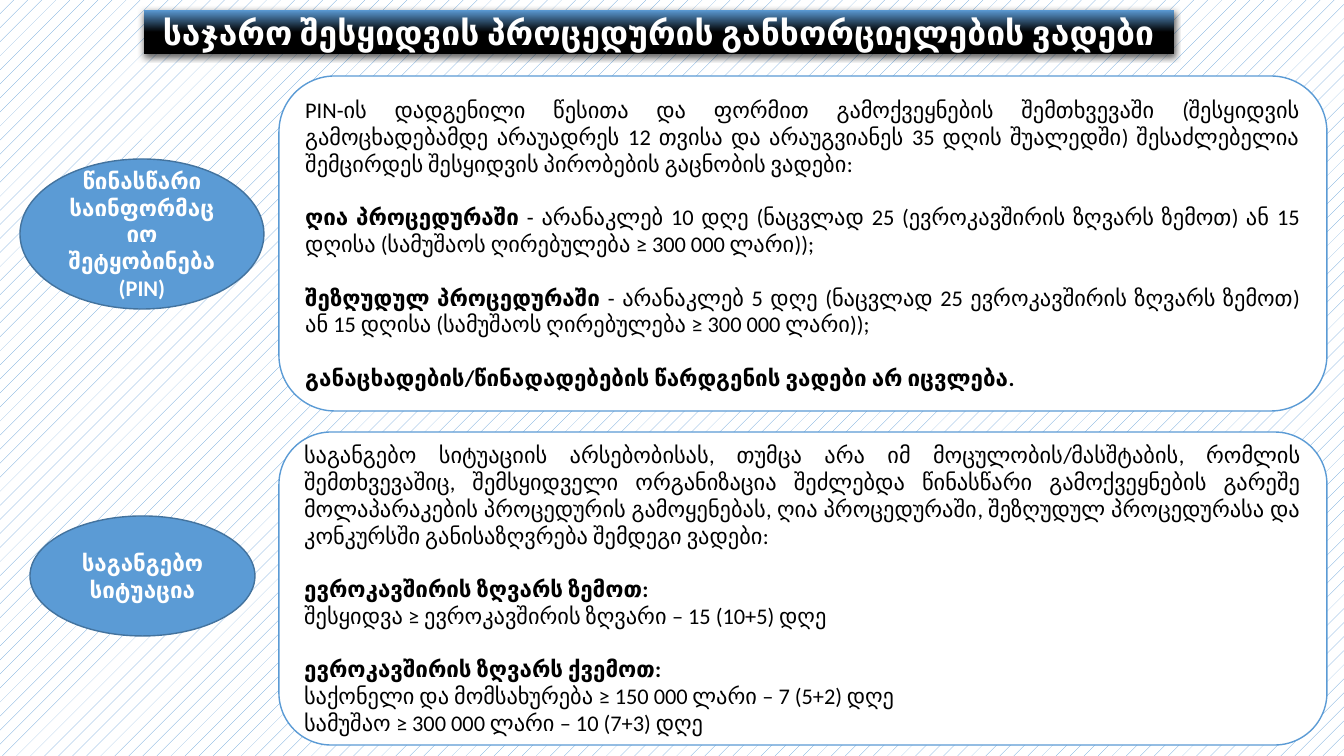
from lxml.etree import SubElement
from pptx import Presentation
from pptx.dml.color import RGBColor
from pptx.enum.dml import MSO_PATTERN_TYPE
from pptx.enum.shapes import MSO_SHAPE
from pptx.enum.text import MSO_ANCHOR, MSO_AUTO_SIZE, PP_ALIGN
from pptx.oxml import parse_xml
from pptx.oxml.ns import nsdecls, qn
from pptx.util import Emu, Pt

BLUE = RGBColor(0x5B, 0x9B, 0xD5)
DARK_BLUE = RGBColor(0x43, 0x73, 0x9E)
BLACK = RGBColor(0, 0, 0)
WHITE = RGBColor(255, 255, 255)

EMU_PER_PX = 914400 / 100.8
SLIDE_SIZE = (1344, 756)
PANEL_LEFT, PANEL_WIDTH = 279, 1048
TITLE_ONLY = 5

TITLE = "საჯარო შესყიდვის პროცედურის განხორციელების ვადები"

NOTICE_TERMS = [
    [("PIN-ის დადგენილი წესითა და ფორმით გამოქვეყნების შემთხვევაში (შესყიდვის გამოცხადებამდე არაუადრეს 12 თვისა და არაუგვიანეს 35 დღის შუალედში) შესაძლებელია შემცირდეს შესყიდვის პირობების გაცნობის ვადები:", False)],
    [("ღია პროცედურაში ", True),
     ("- არანაკლებ 10 დღე (ნაცვლად 25 (ევროკავშირის ზღვარს ზემოთ) ან 15 დღისა (სამუშაოს ღირებულება ≥ 300 000 ლარი));", False)],
    [("შეზღუდულ პროცედურაში ", True),
     ("- არანაკლებ 5 დღე (ნაცვლად 25 ევროკავშირის ზღვარს ზემოთ) ან 15 დღისა (სამუშაოს ღირებულება ≥ 300 000 ლარი));", False)],
    [("განაცხადების/წინადადებების წარდგენის ვადები არ იცვლება.", True)],
]

EMERGENCY_TERMS = [
    [("საგანგებო სიტუაციის არსებობისას, თუმცა არა იმ მოცულობის/მასშტაბის, რომლის შემთხვევაშიც, შემსყიდველი ორგანიზაცია შეძლებდა წინასწარი გამოქვეყნების გარეშე მოლაპარაკების პროცედურის გამოყენებას, ღია პროცედურაში, შეზღუდულ პროცედურასა და კონკურსში განისაზღვრება შემდეგი ვადები:", False)],
    [("ევროკავშირის ზღვარს ზემოთ:", True)],
    [("შესყიდვა ≥ ევროკავშირის ზღვარი – 15 (10+5) დღე", False)],
    [("ევროკავშირის ზღვარს ქვემოთ:", True)],
    [("საქონელი და მომსახურება ≥ 150 000 ლარი – 7 (5+2) დღე", False)],
    [("სამუშაო ≥ 300 000 ლარი – 10 (7+3) დღე", False)],
]

TOPICS = [
    ("წინასწარი საინფორმაციო შეტყობინება (PIN)", (20, 159, 244, 150),
     NOTICE_TERMS, 76, 335),
    ("საგანგებო სიტუაცია", (30, 516, 225, 120),
     EMERGENCY_TERMS, 432, 313),
]


def px(length):
    return Emu(round(length * EMU_PER_PX))


def add_text(paragraph, text, size=16, bold=False, color=BLACK, font="Calibri"):
    run = paragraph.add_run()
    run.text = text
    run.font.name = font
    run.font.size = Pt(size)
    run.font.bold = bold
    run.font.color.rgb = color


class DeadlineSlide:
    """Draws titles, ovals and text panels on one slide."""

    def __init__(self, slide, gap=19):
        self.slide = slide
        self.gap = Pt(gap)

    def background(self):
        fill = self.slide.background.fill
        fill.patterned()
        fill.pattern = MSO_PATTERN_TYPE.PERCENT_5
        fill.fore_color.rgb = BLUE
        fill.back_color.rgb = WHITE

    def title(self, text, left, top, width, height):
        shape = self.slide.shapes.title
        shape.left, shape.top = px(left), px(top)
        shape.width, shape.height = px(width), px(height)
        properties = shape.element.spPr
        geometry = SubElement(properties, qn("a:prstGeom"), prst="roundRect")
        SubElement(geometry, qn("a:avLst"))
        shape.fill.gradient()
        shape.fill.gradient_angle = 270
        for stop, (position, color) in zip(shape.fill.gradient_stops, [(0, BLUE), (0.5, BLACK)]):
            stop.position = position
            stop.color.rgb = color
        shape.line.fill.background()
        properties.append(parse_xml(
            f'<a:effectLst {nsdecls("a")}>'
            '<a:outerShdw blurRad="57150" dist="19050" dir="5400000" algn="ctr" rotWithShape="0">'
            '<a:srgbClr val="000000"><a:alpha val="63000"/></a:srgbClr>'
            '</a:outerShdw></a:effectLst>'))
        frame = shape.text_frame
        frame.auto_size = MSO_AUTO_SIZE.NONE
        frame.word_wrap = False
        frame.vertical_anchor = MSO_ANCHOR.MIDDLE
        paragraph = frame.paragraphs[0]
        paragraph.alignment = PP_ALIGN.CENTER
        paragraph.line_spacing = 1.0
        paragraph.space_before = Pt(0)
        add_text(paragraph, text, size=24, bold=True, color=WHITE)

    def outlined_shape(self, kind, box, fill, line):
        shape = self.slide.shapes.add_shape(kind, *map(px, box))
        shape.shadow.inherit = False
        shape.fill.solid()
        shape.fill.fore_color.rgb = fill
        shape.line.color.rgb = line
        shape.line.width = Pt(1)
        shape.text_frame.word_wrap = True
        shape.text_frame.vertical_anchor = MSO_ANCHOR.MIDDLE
        return shape

    def oval(self, text, box):
        shape = self.outlined_shape(MSO_SHAPE.OVAL, box, BLUE, DARK_BLUE)
        paragraph = shape.text_frame.paragraphs[0]
        paragraph.alignment = PP_ALIGN.CENTER
        add_text(paragraph, text, bold=True, color=WHITE)

    def panel(self, terms, box):
        shape = self.outlined_shape(MSO_SHAPE.ROUNDED_RECTANGLE, box, WHITE, BLUE)
        frame = shape.text_frame
        for index, runs in enumerate(terms):
            paragraph = frame.add_paragraph() if index else frame.paragraphs[0]
            paragraph.alignment = PP_ALIGN.JUSTIFY
            starts_bold = runs[0][1]
            paragraph.space_before = self.gap if starts_bold else Pt(0)
            for text, bold in runs:
                add_text(paragraph, text, bold=bold)


def main():
    presentation = Presentation()
    presentation.slide_width, presentation.slide_height = map(px, SLIDE_SIZE)
    layout = presentation.slide_layouts[TITLE_ONLY]
    page = DeadlineSlide(presentation.slides.add_slide(layout))
    page.background()
    page.title(TITLE, 144, 10, 1030, 44)
    for label, oval_box, terms, top, height in TOPICS:
        page.panel(terms, (PANEL_LEFT, top, PANEL_WIDTH, height))
        page.oval(label, oval_box)
    presentation.save("out.pptx")


if __name__ == "__main__":
    main()
